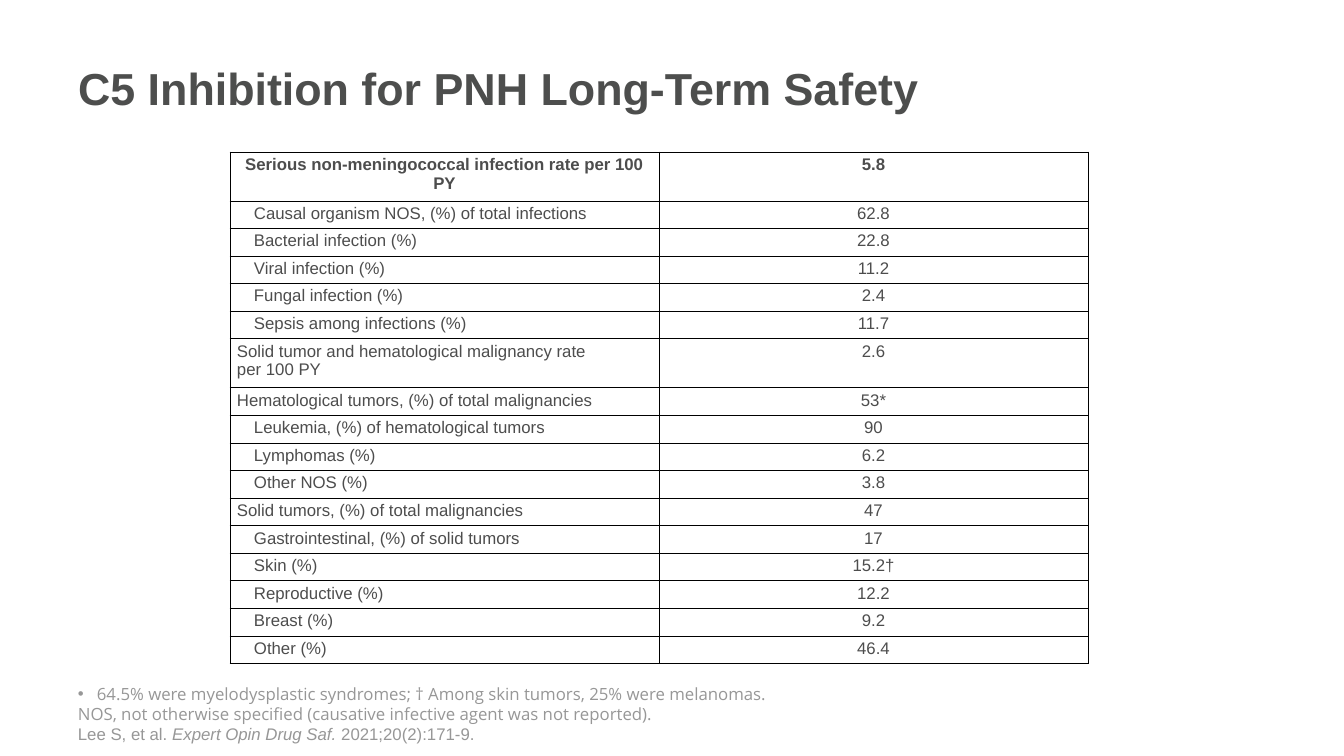
from lxml import etree
from pptx import Presentation
from pptx import util as u
from pptx.dml.color import RGBColor
from pptx.enum import text as t
from pptx.oxml import ns

PX = 914400 / 100.8
LEFT, MID = t.PP_ALIGN.LEFT, t.PP_ALIGN.CENTER


def px(*nums):
    return [u.Emu(round(n * PX)) for n in nums]


def write(para, words, size=12, face="Arial", color="4D4D4D",
          bold=False, slant=False, align=LEFT):
    para.alignment = align
    for i, line in enumerate(words.split("\n")):
        if i:
            para.add_line_break()
        run = para.add_run()
        run.text = line
        font = run.font
        font.size, font.name = u.Pt(size), face
        font.bold, font.italic = bold, slant
        font.color.rgb = RGBColor.from_string(color)


deck = Presentation()
deck.slide_width, deck.slide_height = px(1344, 756)
slide = deck.slides.add_slide(deck.slide_layouts[5])

# Title
title = slide.shapes.title
title.left, title.top, title.width, title.height = px(68, 22, 1184, 131)
frame = title.text_frame
frame.word_wrap = True
frame.auto_size = t.MSO_AUTO_SIZE.NONE
frame.vertical_anchor = t.MSO_ANCHOR.MIDDLE
write(frame.paragraphs[0], "C5 Inhibition for PNH Long-Term Safety",
      size=32, color="4D4E4D", bold=True)

# Safety rates: indent level, label, value
rates = [
    (0, "Serious non-meningococcal infection rate per 100 PY", "5.8"),
    (1, "Causal organism NOS, (%) of total infections", "62.8"),
    (1, "Bacterial infection (%)", "22.8"),
    (1, "Viral infection (%)", "11.2"),
    (1, "Fungal infection (%)", "2.4"),
    (1, "Sepsis among infections (%)", "11.7"),
    (0, "Solid tumor and hematological malignancy rate\nper 100 PY", "2.6"),
    (0, "Hematological tumors, (%) of total malignancies", "53*"),
    (1, "Leukemia, (%) of hematological tumors", "90"),
    (1, "Lymphomas (%)", "6.2"),
    (1, "Other NOS (%)", "3.8"),
    (0, "Solid tumors, (%) of total malignancies", "47"),
    (1, "Gastrointestinal, (%) of solid tumors", "17"),
    (1, "Skin (%)", "15.2†"),
    (1, "Reproductive (%)", "12.2"),
    (1, "Breast (%)", "9.2"),
    (1, "Other (%)", "46.4"),
]
TALL, FULL = 49, 512
wraps = (0, 6)
low = (FULL - TALL * len(wraps)) / (len(rates) - len(wraps))

# Table
table = slide.shapes.add_table(len(rates), 2, *px(230, 152, 858, FULL)).table
table.first_row = table.horz_banding = False
for col in table.columns:
    col.width = px(429)[0]
for r, (level, label, value) in enumerate(rates):
    table.rows[r].height = px(TALL if r in wraps else low)[0]
    for c, words in enumerate((label, value)):
        cell = table.cell(r, c)
        cell.margin_left, cell.margin_right = px(7, 7)
        cell.margin_top, cell.margin_bottom = px(3, 3)
        para = cell.text_frame.paragraphs[0]
        if level and c == 0:
            para._p.get_or_add_pPr().set("marL", str(px(17)[0]))
        write(para, words, bold=r == 0, align=MID if c or r == 0 else LEFT)
        # Cell borders, then fill
        props = cell._tc.get_or_add_tcPr()
        for side in "LRTB":
            line = etree.SubElement(props, ns.qn("a:ln" + side), w=str(u.Pt(0.75)))
            solid = etree.SubElement(line, ns.qn("a:solidFill"))
            etree.SubElement(solid, ns.qn("a:srgbClr"), val="000000")
        cell.fill.solid()
        cell.fill.fore_color.rgb = RGBColor.from_string("FFFFFF")

# Footnotes
frame = slide.shapes.add_textbox(*px(68, 701, 1184, 48)).text_frame
frame.word_wrap = True
frame.vertical_anchor = t.MSO_ANCHOR.BOTTOM
GREY = "979797"
note = frame.paragraphs[0]
props = note._p.get_or_add_pPr()
props.set("marL", str(px(19)[0]))
props.set("indent", str(px(-19)[0]))
etree.SubElement(props, ns.qn("a:buFont"), typeface="Arial")
etree.SubElement(props, ns.qn("a:buChar"), char="•")
write(note, "64.5% were myelodysplastic syndromes; † Among skin tumors, 25% were melanomas.",
      face="Open Sans", color=GREY)
write(frame.add_paragraph(),
      "NOS, not otherwise specified (causative infective agent was not reported).",
      face="Open Sans", color=GREY)
cite = frame.add_paragraph()
write(cite, "Lee S, et al. ", color=GREY)
write(cite, "Expert Opin Drug Saf.", color=GREY, slant=True)
write(cite, " 2021;20(2):171-9.", color=GREY)

deck.save("out.pptx")
